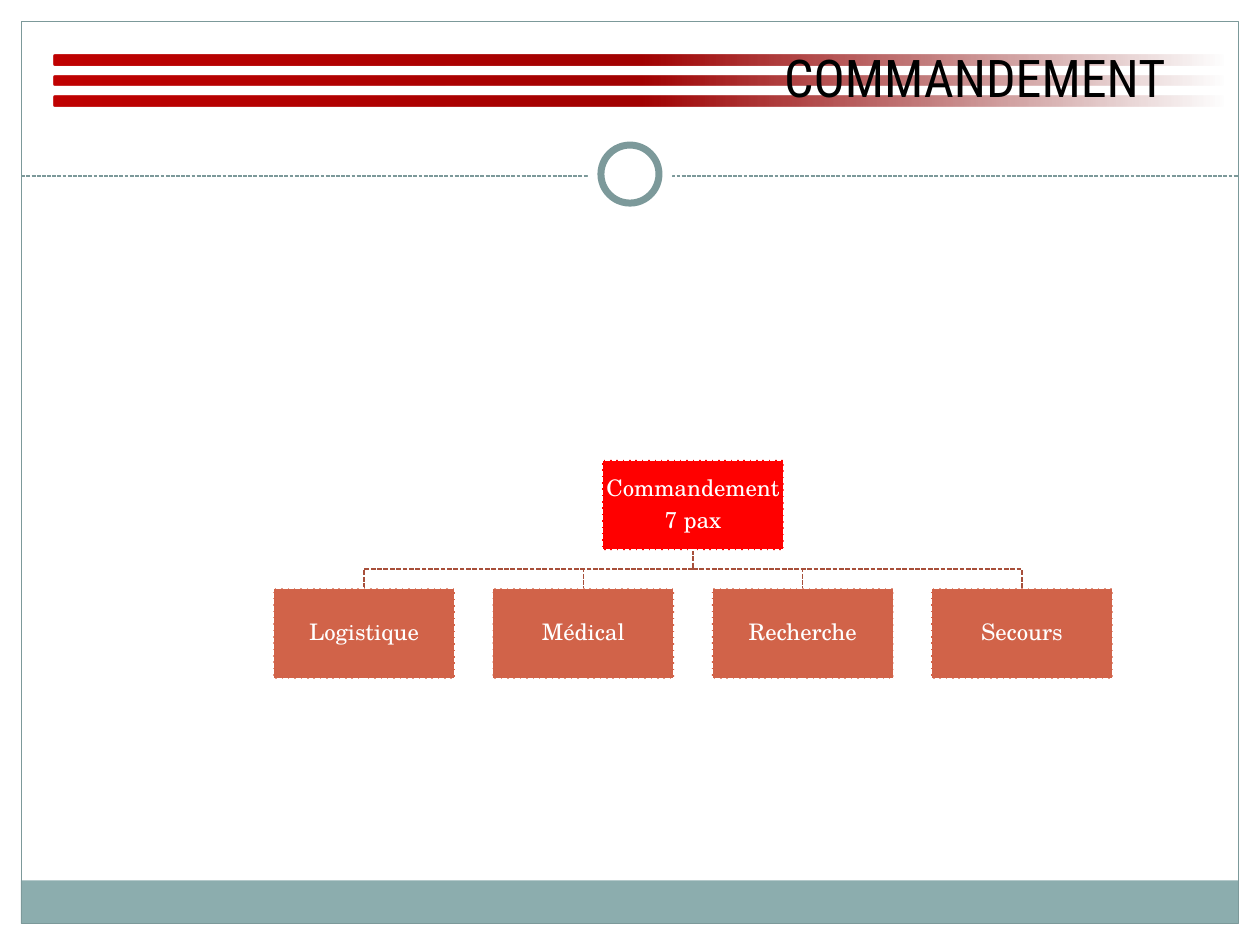
from dataclasses import dataclass

from lxml.etree import SubElement
from pptx import Presentation
from pptx.dml.color import RGBColor
from pptx.enum.dml import MSO_LINE
from pptx.enum.shapes import MSO_CONNECTOR, MSO_SHAPE as SHAPE
from pptx.enum.text import MSO_ANCHOR, MSO_AUTO_SIZE, PP_ALIGN
from pptx.oxml.ns import qn
from pptx.util import Cm, Pt


@dataclass(frozen=True)
class Theme:
    white: str = "FFFFFF"
    black: str = "000000"
    footer: str = "8CADAE"
    frame: str = "7C999A"
    root: str = "FF0000"
    unit: str = "D16349"
    branch: str = "A74F3A"
    # position, colour and opacity, in thousandths of a percent
    stripe: tuple = ((0, "C00000", 100000), (50000, "A20000", 100000), (100000, "720000", 0))
    title_font: str = "Roboto Condensed"
    body_font: str = "TeX Gyre Schola"
    title_size: float = 29.7
    body_size: float = 13
    thin: float = 0.75
    dash: float = 0.9
    ring: float = 4


theme = Theme()


def style(shape, fill=None, line=None, width=theme.thin, dashed=False):
    shape.shadow.inherit = False
    if fill:
        shape.fill.solid()
        shape.fill.fore_color.rgb = RGBColor.from_string(fill)
    else:
        shape.fill.background()
    if line:
        shape.line.color.rgb = RGBColor.from_string(line)
        shape.line.width = Pt(width)
        if dashed:
            shape.line.dash_style = MSO_LINE.SQUARE_DOT
    else:
        shape.line.fill.background()


def format_text(frame, font, size, color):
    frame.word_wrap = True
    frame.auto_size = MSO_AUTO_SIZE.NONE
    for paragraph in frame.paragraphs:
        paragraph.alignment = PP_ALIGN.CENTER
        paragraph.line_spacing = 0.9
        for run in paragraph.runs:
            run.font.name = font
            run.font.size = Pt(size)
            run.font.color.rgb = RGBColor.from_string(color)


prs = Presentation()
prs.slide_width, prs.slide_height = Cm(25.4), Cm(19.05)
slide = prs.slides.add_slide(prs.slide_layouts[5])
shapes = slide.shapes

# Footer band and page frame
footer = shapes.add_shape(SHAPE.RECTANGLE, Cm(0.42), Cm(17.75), Cm(24.54), Cm(0.87))
style(footer, theme.footer)
frame = shapes.add_shape(SHAPE.RECTANGLE, Cm(0.43), Cm(0.43), Cm(24.54), Cm(18.19))
style(frame, line=theme.frame)

# Dashed divider with a ring in the middle
divider = shapes.add_connector(MSO_CONNECTOR.STRAIGHT, Cm(0.43), Cm(3.55), Cm(24.97), Cm(3.55))
divider.line.color.rgb = RGBColor.from_string(theme.frame)
divider.line.width = Pt(theme.thin)
divider.line.dash_style = MSO_LINE.SQUARE_DOT
SubElement(divider._element.spPr, qn("a:effectLst"))
for diameter, ring_color in ((1.7, None), (1.17, theme.frame)):
    disc = shapes.add_shape(SHAPE.OVAL, Cm(12.7 - diameter / 2), Cm(3.51 - diameter / 2),
                            Cm(diameter), Cm(diameter))
    style(disc, theme.white, ring_color, theme.ring)

# Three stripes fading to the right
for row in range(3):
    stripe = shapes.add_shape(SHAPE.ROUNDED_RECTANGLE, Cm(1.09), Cm(1.11 + row * 0.41),
                              Cm(23.6), Cm(0.21))
    style(stripe)
    stripe.fill.gradient()
    stripe.fill.gradient_angle = 0
    stops = stripe._element.spPr.find(qn("a:gradFill")).find(qn("a:gsLst"))
    for old_stop in list(stops):
        stops.remove(old_stop)
    for position, color, opacity in theme.stripe:
        stop = SubElement(stops, qn("a:gs"), pos=str(position))
        stop_color = SubElement(stop, qn("a:srgbClr"), val=color)
        SubElement(stop_color, qn("a:alpha"), val=str(opacity))

# Organisation chart: grid in centimetres
box_width, box_height, pitch = 3.66, 1.82, 4.42
root_top, unit_top, first_left = 9.27, 11.86, 5.51
units = ["Logistique", "Médical", "Recherche", "Secours"]
unit_lefts = [first_left + i * pitch for i in range(len(units))]
root_left = (unit_lefts[0] + unit_lefts[-1]) / 2
root_center, root_bottom = root_left + box_width / 2, root_top + box_height
bend = (root_bottom + unit_top) / 2

# Branches
for left in unit_lefts:
    center = left + box_width / 2
    outline = shapes.build_freeform(Cm(root_center), Cm(root_bottom))
    outline.add_line_segments([(Cm(root_center), Cm(bend)), (Cm(center), Cm(bend)),
                               (Cm(center), Cm(unit_top))], close=False)
    style(outline.convert_to_shape(), line=theme.branch, width=theme.dash, dashed=True)

# Boxes
boxes = [("Commandement\n7 pax", root_left, root_top, theme.root)]
boxes += [(unit, left, unit_top, theme.unit) for unit, left in zip(units, unit_lefts)]
for label, left, top, color in boxes:
    box = shapes.add_shape(SHAPE.RECTANGLE, Cm(left), Cm(top), Cm(box_width), Cm(box_height))
    style(box, color, theme.white, theme.dash, dashed=True)
    text = box.text_frame
    text.text = label
    text.vertical_anchor = MSO_ANCHOR.MIDDLE
    text.margin_left = text.margin_right = text.margin_top = text.margin_bottom = Cm(0.03)
    format_text(text, theme.body_font, theme.body_size, theme.white)
    for paragraph in text.paragraphs:
        paragraph.space_after = Pt(0.35 * theme.body_size)

# Title, brought in front of the stripes
title = shapes.title
title.left, title.top, title.width, title.height = Cm(14.5), Cm(0.91), Cm(10.31), Cm(1.4)
title.text_frame.text = "COMMANDEMENT"
title.text_frame.vertical_anchor = MSO_ANCHOR.BOTTOM
format_text(title.text_frame, theme.title_font, theme.title_size, theme.black)
shapes._spTree.append(title._element)

prs.save("out.pptx")
